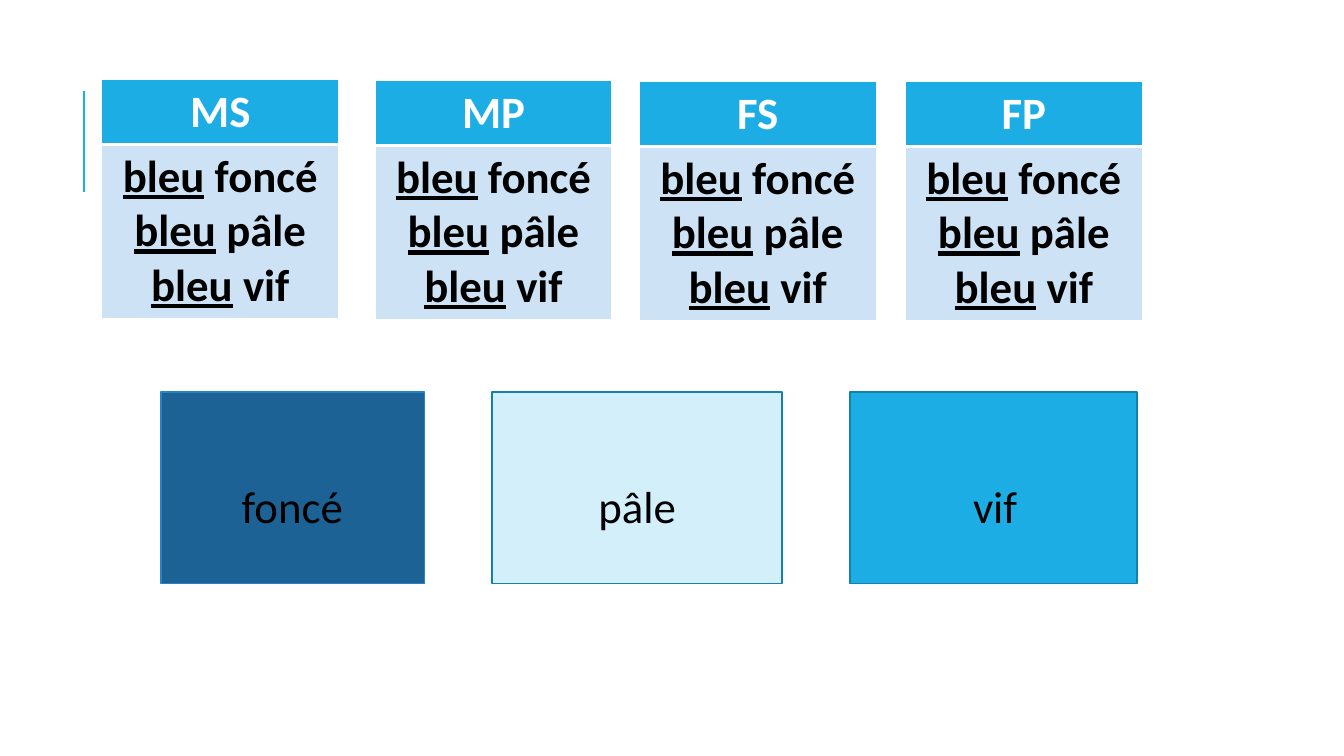
from dataclasses import dataclass

import lxml.etree
import pptx
import pptx.dml.color
import pptx.enum.shapes
import pptx.enum.text
import pptx.oxml.ns
import pptx.slide
import pptx.text.text
import pptx.util
from pptx.util import Inches

RGBColor = pptx.dml.color.RGBColor
WHITE = RGBColor(0xFF, 0xFF, 0xFF)
BLACK = RGBColor(0x00, 0x00, 0x00)
BRIGHT_BLUE = RGBColor(0x1C, 0xAD, 0xE4)
DARK_BLUE = RGBColor(0x1D, 0x62, 0x94)
PALE_BLUE = RGBColor(0xD2, 0xEF, 0xFA)
CELL_BLUE = RGBColor(0xCD, 0xE3, 0xF5)
EDGE_BLUE = RGBColor(0x26, 0x83, 0xC6)
EDGE_TEAL = RGBColor(0x15, 0x80, 0xA9)

FONT = "Calibri"
FONT_SIZE = 32
TABLE_WIDTH = 2.35
ROW_HEIGHTS = (0.64, 1.69)
SWATCH_TOP, SWATCH_HEIGHT = 3.89, 1.9
LABEL_TOP, LABEL_WIDTH, LABEL_HEIGHT = 4.7, 1.96, 0.64


@dataclass
class FormTable:
    heading: str
    left: float
    top: float


@dataclass
class Swatch:
    shade: str
    left: float
    width: float
    label_left: float
    fill: RGBColor
    edge: RGBColor


FORMS = [
    FormTable("MS", 1.01, 0.79),
    FormTable("MP", 3.72, 0.8),
    FormTable("FS", 6.34, 0.81),
    FormTable("FP", 8.98, 0.81),
]
SWATCHES = [
    Swatch("foncé", 1.6, 2.61, 1.92, DARK_BLUE, EDGE_BLUE),
    Swatch("pâle", 4.88, 2.88, 5.34, PALE_BLUE, EDGE_TEAL),
    Swatch("vif", 8.43, 2.85, 8.89, BRIGHT_BLUE, EDGE_TEAL),
]


def add_run(p: pptx.text.text._Paragraph, text: str, color: RGBColor,
            bold: bool = False, underline: bool = False) -> None:
    p.alignment = pptx.enum.text.PP_ALIGN.CENTER
    r = p.add_run()
    r.text = text
    r.font.name = FONT
    r.font.size = pptx.util.Pt(FONT_SIZE)
    r.font.bold = bold
    r.font.underline = underline
    r.font.color.rgb = color


def set_borders(cell: pptx.table._Cell, bottom: float) -> None:
    """Draw white borders; they must precede the fill in the cell properties."""
    qn = pptx.oxml.ns.qn
    tc_pr = cell._tc.get_or_add_tcPr()
    widths = {"a:lnL": 1, "a:lnR": 1, "a:lnT": 1, "a:lnB": bottom}
    for i, (tag, width) in enumerate(widths.items()):
        ln = lxml.etree.Element(qn(tag), w=str(pptx.util.Pt(width)))
        fill = lxml.etree.SubElement(ln, qn("a:solidFill"))
        lxml.etree.SubElement(fill, qn("a:srgbClr"), val=str(WHITE))
        tc_pr.insert(i, ln)


def add_form_table(s: pptx.slide.Slide, form: FormTable) -> None:
    table = s.shapes.add_table(
        2, 1, Inches(form.left), Inches(form.top),
        Inches(TABLE_WIDTH), Inches(sum(ROW_HEIGHTS))).table
    for row, height in zip(table.rows, ROW_HEIGHTS):
        row.height = Inches(height)

    head, body = table.cell(0, 0), table.cell(1, 0)
    for cell, color, bottom in ((head, BRIGHT_BLUE, 3), (body, CELL_BLUE, 1)):
        cell.fill.solid()
        cell.fill.fore_color.rgb = color
        set_borders(cell, bottom)

    add_run(head.text_frame.paragraphs[0], form.heading, WHITE, bold=True)
    tf = body.text_frame
    for i, swatch in enumerate(SWATCHES):
        p = tf.add_paragraph() if i else tf.paragraphs[0]
        add_run(p, "bleu", BLACK, bold=True, underline=True)
        add_run(p, f" {swatch.shade}", BLACK, bold=True)


def add_swatch(s: pptx.slide.Slide, swatch: Swatch) -> None:
    sp = s.shapes.add_shape(
        pptx.enum.shapes.MSO_SHAPE.RECTANGLE, Inches(swatch.left),
        Inches(SWATCH_TOP), Inches(swatch.width), Inches(SWATCH_HEIGHT))
    sp.shadow.inherit = False
    sp.fill.solid()
    sp.fill.fore_color.rgb = swatch.fill
    sp.line.color.rgb = swatch.edge
    sp.line.width = pptx.util.Pt(1.25)


def add_label(s: pptx.slide.Slide, swatch: Swatch) -> None:
    tf = s.shapes.add_textbox(
        Inches(swatch.label_left), Inches(LABEL_TOP),
        Inches(LABEL_WIDTH), Inches(LABEL_HEIGHT)).text_frame
    tf.word_wrap = True
    tf.auto_size = pptx.enum.text.MSO_AUTO_SIZE.SHAPE_TO_FIT_TEXT
    add_run(tf.paragraphs[0], swatch.shade, BLACK)


def add_accent_line(s: pptx.slide.Slide) -> None:
    line = s.shapes.add_connector(
        pptx.enum.shapes.MSO_CONNECTOR.STRAIGHT,
        Inches(0.83), Inches(1.9), Inches(0.83), Inches(0.9))
    line.line.color.rgb = BRIGHT_BLUE
    line.line.width = pptx.util.Pt(1.5)
    lxml.etree.SubElement(line._element.spPr, pptx.oxml.ns.qn("a:effectLst"))


def main() -> None:
    prs = pptx.Presentation()
    prs.slide_width, prs.slide_height = Inches(13.33), Inches(7.5)
    s = prs.slides.add_slide(prs.slide_layouts[6])

    # Accent line and the four agreement tables
    add_accent_line(s)
    for form in FORMS:
        add_form_table(s, form)

    # Colour swatches with their labels on top
    for swatch in SWATCHES:
        add_swatch(s, swatch)
        add_label(s, swatch)

    prs.save("out.pptx")


if __name__ == "__main__":
    main()
